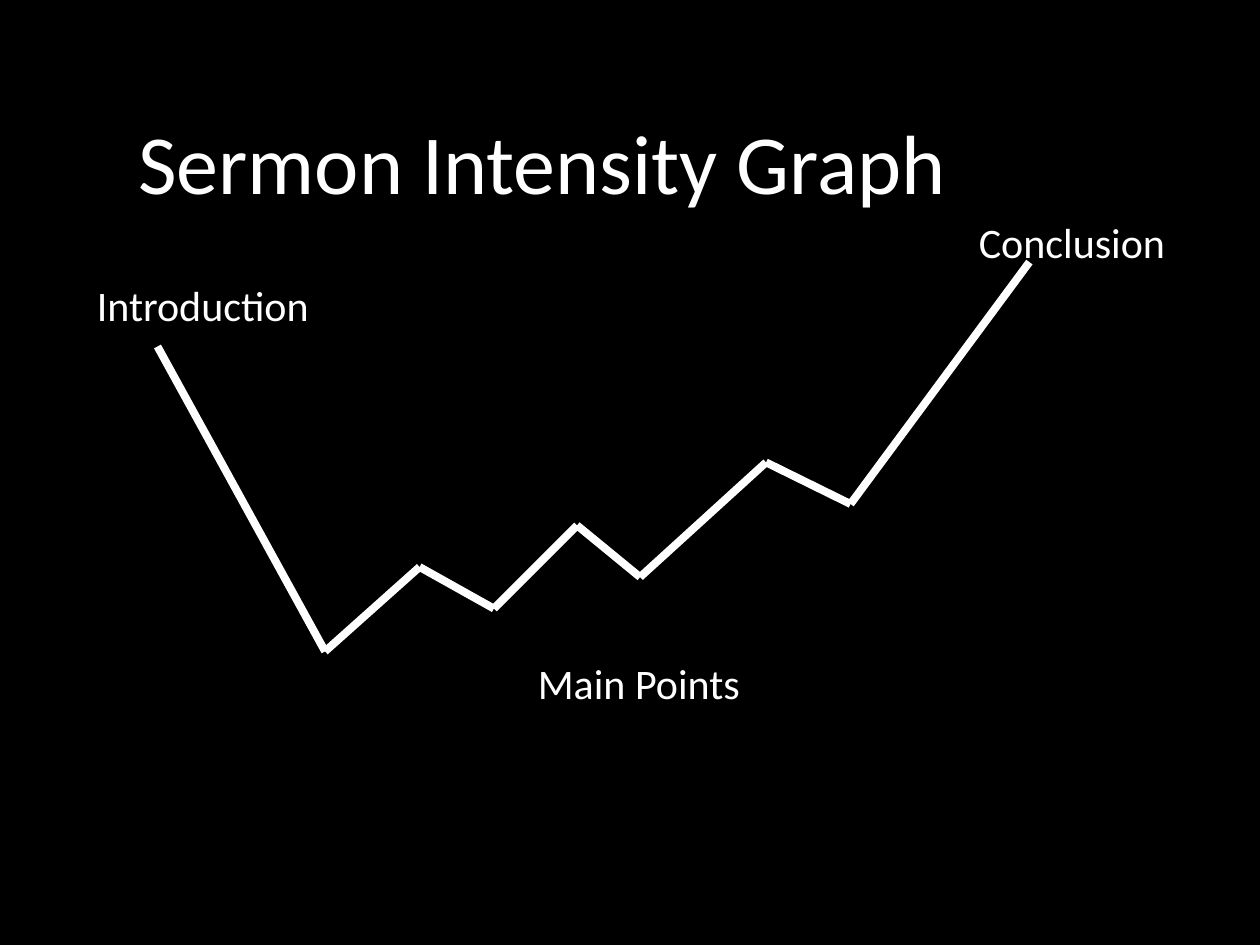
from itertools import pairwise

from lxml import etree
from pptx import Presentation
from pptx.dml.color import RGBColor
from pptx.enum.shapes import MSO_CONNECTOR
from pptx.enum.text import MSO_AUTO_SIZE
from pptx.oxml.ns import qn
from pptx.util import Inches, Pt

STRAIGHT = MSO_CONNECTOR.STRAIGHT
FIT_SHAPE = MSO_AUTO_SIZE.SHAPE_TO_FIT_TEXT

WHITE = "FFFFFF"
BLACK = "000000"

TITLE_BOX = (1, 0.83, 6.68, 0.91)
GRAPH_BOX = (0.67, 1.67, 8.69, 4)

# Offsets from the top left corner of the graph box, in inches
INTENSITY = [
    (0.58, 1.08), (1.91, 3.5), (2.66, 2.83), (3.25, 3.16), (3.91, 2.5),
    (4.41, 2.91), (5.41, 2), (6.08, 2.33), (7.5, 0.41),
]
STAGES = [
    ("Introduction", 0, 0.5, 1.98),
    ("Main Points", 3.5, 3.5, 1.82),
    ("Conclusion", 7, 0, 1.69),
]


def color(hex_string):
    return RGBColor.from_string(hex_string)


def add_text(slide, box, text, size):
    frame = slide.shapes.add_textbox(*map(Inches, box)).text_frame
    for attribute, value in {"word_wrap": False, "auto_size": FIT_SHAPE}.items():
        setattr(frame, attribute, value)
    run = frame.paragraphs[0].add_run()
    run.text = text
    for attribute, value in {"name": "Calibri", "size": Pt(size)}.items():
        setattr(run.font, attribute, value)
    run.font.color.rgb = color(WHITE)


def add_segment(slide, start, end):
    segment = slide.shapes.add_connector(STRAIGHT, *map(Inches, start + end))
    segment.line.color.rgb = color(WHITE)
    segment.line.width = Pt(4.5)
    etree.SubElement(segment._element.spPr, qn("a:effectLst"))


def add_graph(slide, box):
    left, top, _, _ = box

    # Intensity curve
    curve = [(left + x, top + y) for x, y in INTENSITY]
    for start, end in pairwise(curve):
        add_segment(slide, start, end)

    # Names of the sermon stages
    for stage, x, y, width in STAGES:
        add_text(slide, (left + x, top + y, width, 0.5), stage, 24)


def main():
    deck = Presentation()
    deck.slide_width, deck.slide_height = Inches(10), Inches(7.5)
    slide = deck.slides.add_slide(deck.slide_layouts[6])
    slide.background.fill.solid()
    slide.background.fill.fore_color.rgb = color(BLACK)

    add_text(slide, TITLE_BOX, "Sermon Intensity Graph", 48)
    add_graph(slide, GRAPH_BOX)
    deck.save("out.pptx")


if __name__ == "__main__":
    main()
